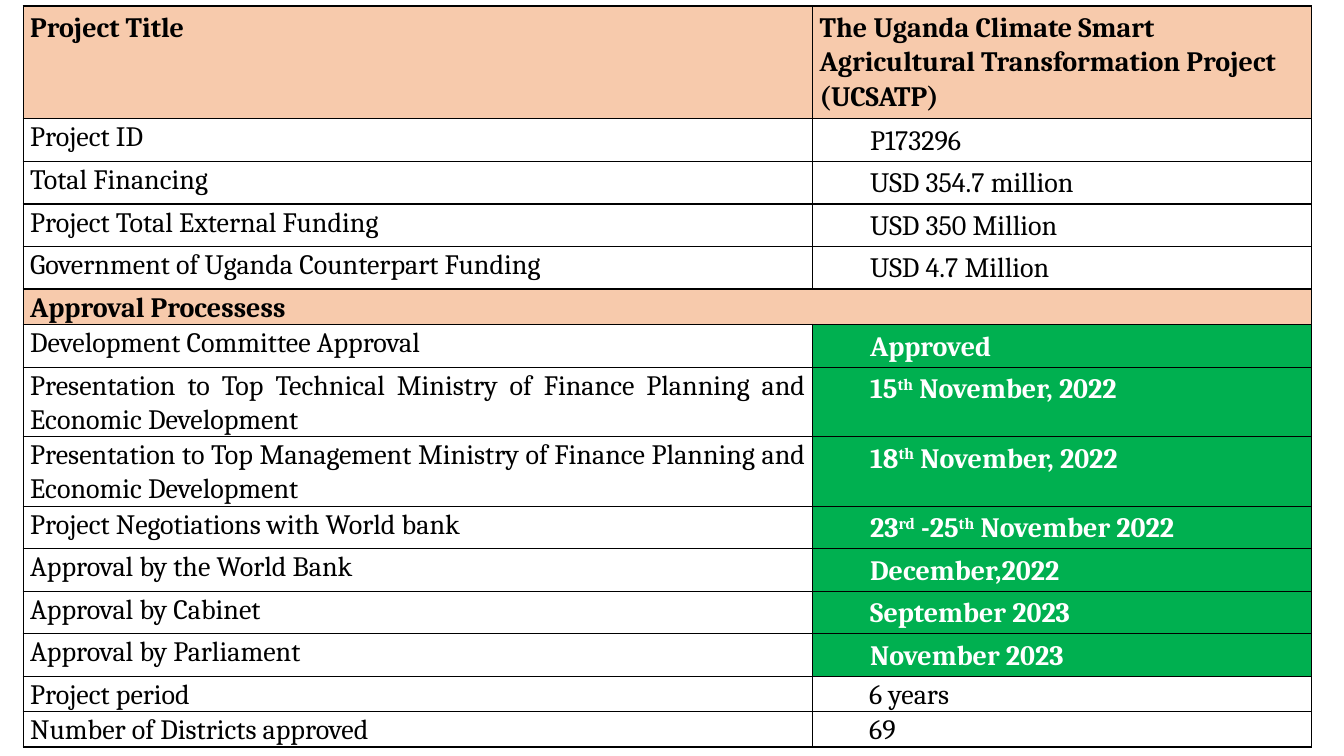
import pptx
import pptx.dml.color
import pptx.enum.text
import pptx.oxml
import pptx.oxml.ns
import pptx.util

Inches = pptx.util.Inches
PEACH, GREEN, BLACK, WHITE = "F7CAAC", "00B050", "000000", "FFFFFF"
HEADING = ("Project Title", "The Uganda Climate Smart Agricultural Transformation Project (UCSATP)")
FUNDING = [
    ("Project ID", "P173296"),
    ("Total Financing", "USD 354.7 million"),
    ("Project Total External Funding", "USD 350 Million"),
    ("Government of Uganda Counterpart Funding", "USD 4.7 Million"),
]
SECTION = "Approval Processess"
APPROVALS = [
    ("Development Committee Approval", "Approved"),
    ("Presentation to Top Technical Ministry of Finance Planning and Economic Development",
     "15^th^ November, 2022"),
    ("Presentation to Top Management Ministry of Finance Planning and Economic Development",
     "18^th^ November, 2022"),
    ("Project Negotiations with World bank", "23^rd^ -25^th^ November 2022"),
    ("Approval by the World Bank", "December,2022"),
    ("Approval by Cabinet", "September 2023"),
    ("Approval by Parliament", "November 2023"),
]
SCOPE = [("Project period", "6 years"), ("Number of Districts approved", "69")]
COLUMN_WIDTHS = [7.83, 4.95]
ROW_HEIGHTS = [1.12] + [0.42] * 4 + [0.35, 0.42] + [0.69] * 2 + [0.42] * 4 + [0.35] * 2


def rgb(value):
    return pptx.dml.color.RGBColor.from_string(value)


def write_text(frame, text, color=BLACK, bold=False, justify=False, spacing=1.07, left=0, hanging=0):
    frame.word_wrap = True
    para = frame.paragraphs[0]
    para.line_spacing = spacing
    para.space_after = pptx.util.Pt(8)
    align = pptx.enum.text.PP_ALIGN
    para.alignment = align.JUSTIFY if justify else align.LEFT
    properties = para._p.get_or_add_pPr()
    properties.set("marL", str(Inches(left)))
    properties.set("indent", str(-Inches(hanging)))
    for number, piece in enumerate(text.split("^")):
        if not piece:
            continue
        span = para.add_run()
        span.text = piece
        span.font.name = "Cambria"
        span.font.size = pptx.util.Pt(20)
        span.font.bold = bold
        span.font.color.rgb = rgb(color)
        if number % 2:
            span._r.get_or_add_rPr().set("baseline", "30000")


def format_cell(cell, fill=None, side=0.07, top=0.04, bottom=0.04):
    cell.margin_left = cell.margin_right = Inches(side)
    cell.margin_top, cell.margin_bottom = Inches(top), Inches(bottom)
    properties = cell._tc.get_or_add_tcPr()
    for edge in ("lnL", "lnR", "lnT", "lnB"):
        properties.append(pptx.oxml.parse_xml(
            f'<a:{edge} {pptx.oxml.ns.nsdecls("a")} w="12700"><a:solidFill>'
            f'<a:srgbClr val="{BLACK}"/></a:solidFill></a:{edge}>'))
    if fill:
        cell.fill.solid()
        cell.fill.fore_color.rgb = rgb(fill)
    else:
        cell.fill.background()


def add_project_table(page):
    frame = page.shapes.add_table(
        len(ROW_HEIGHTS), len(COLUMN_WIDTHS), Inches(0.23), Inches(0.06),
        Inches(sum(COLUMN_WIDTHS)), Inches(sum(ROW_HEIGHTS)))
    table = frame.table
    table.first_row = table.horz_banding = False
    for column, width in zip(table.columns, COLUMN_WIDTHS):
        column.width = Inches(width)
    for row, height in zip(table.rows, ROW_HEIGHTS):
        row.height = Inches(height)
    return table


def fill_heading(table):
    for column, (text, indent) in enumerate(zip(HEADING, (0.38, 0))):
        cell = table.cell(0, column)
        format_cell(cell, PEACH)
        write_text(cell.text_frame, text, bold=True, left=indent, hanging=indent)


def fill_section(table, row):
    first, last = table.cell(row, 0), table.cell(row, 1)
    first.merge(last)
    for cell in (first, last):
        format_cell(cell, PEACH, top=0.01, bottom=0)
    write_text(first.text_frame, SECTION, bold=True)


def fill_rows(table, start, entries, fill=None, color=BLACK, bold=False, spacing=1.07, **margins):
    for row, (label, value) in enumerate(entries, start):
        label_cell, value_cell = table.cell(row, 0), table.cell(row, 1)
        format_cell(label_cell, top=0.01, bottom=0)
        write_text(label_cell.text_frame, label, justify=True, spacing=1.06)
        format_cell(value_cell, fill, **margins)
        write_text(value_cell.text_frame, value, color=color, bold=bold, spacing=spacing, left=0.5)


def main():
    deck = pptx.Presentation()
    deck.slide_width, deck.slide_height = Inches(13.33), Inches(7.5)
    page = deck.slides.add_slide(deck.slide_layouts[6])
    table = add_project_table(page)
    fill_heading(table)
    fill_rows(table, 1, FUNDING)
    fill_section(table, 5)
    fill_rows(table, 6, APPROVALS, fill=GREEN, color=WHITE, bold=True)
    fill_rows(table, 13, SCOPE, spacing=1.06, side=0.06, top=0.01, bottom=0)
    deck.save("out.pptx")


if __name__ == "__main__":
    main()
